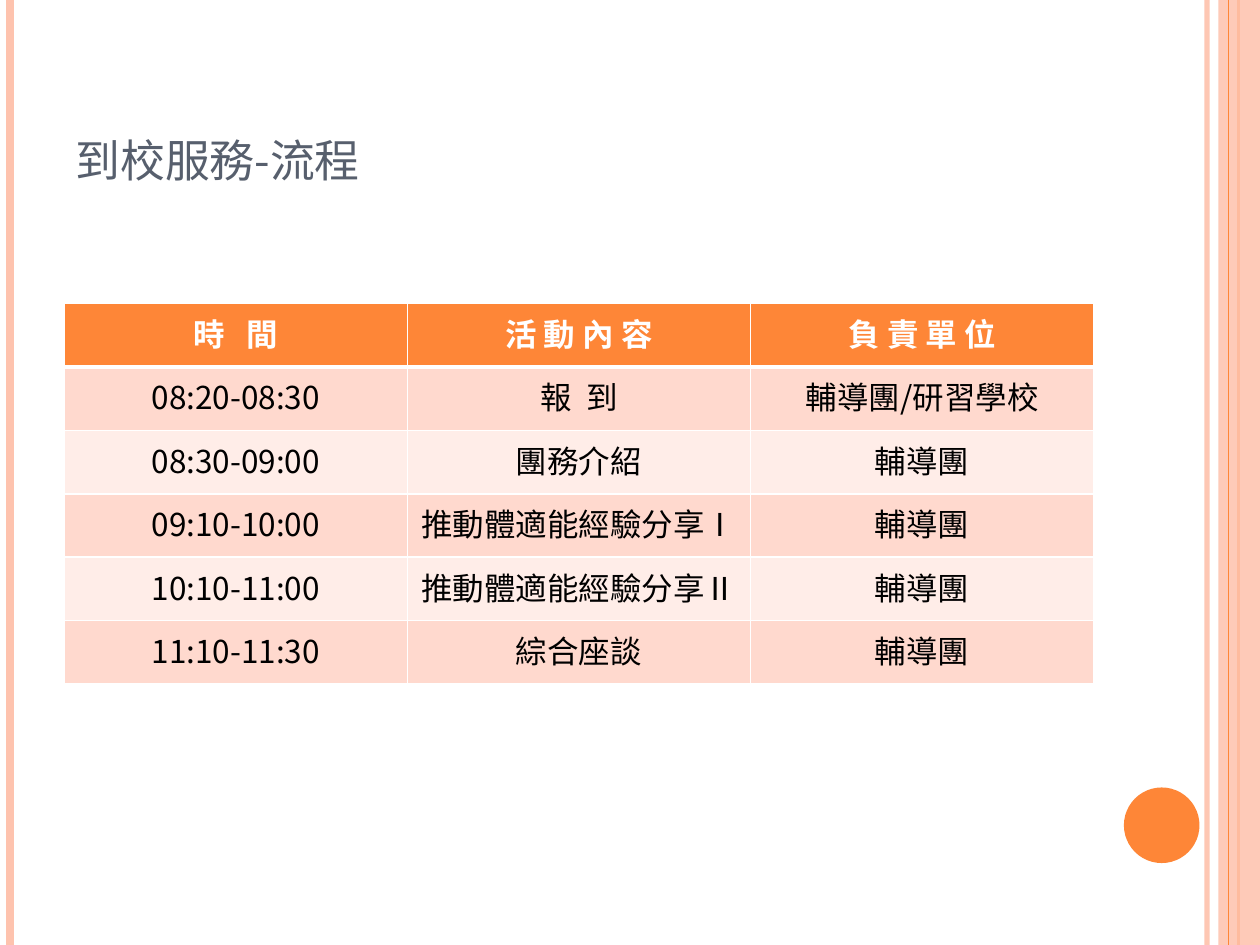
from lxml.etree import SubElement
from pptx import Presentation
from pptx.dml.color import RGBColor
from pptx.enum.shapes import MSO_CONNECTOR as Connector, MSO_SHAPE as Shape
from pptx.enum.text import MSO_ANCHOR as Anchor, PP_ALIGN as Align
from pptx.oxml.ns import qn
from pptx.util import Inches, Pt

FONT = "Noto Sans CJK SC"
ORANGE = "FE8637"
PEACH = "FEC3AE"
WHITE = "FFFFFF"
BLACK = "000000"
SLATE = "575F6D"
BANDS = ("FFD9CE", "FFEDE8")

SCHEDULE = [
    ("時   間", "活 動 內 容", "負 責 單 位"),
    ("08:20-08:30", "報  到", "輔導團/研習學校"),
    ("08:30-09:00", "團務介紹", "輔導團"),
    ("09:10-10:00", "推動體適能經驗分享Ⅰ", "輔導團"),
    ("10:10-11:00", "推動體適能經驗分享Ⅱ", "輔導團"),
    ("11:10-11:30", "綜合座談", "輔導團"),
]
RULES = [
    (9.58, PEACH, 3, 93),
    (0.08, PEACH, 4.5, 100),
    (9.83, ORANGE, 1.5, 100),
    (9.75, ORANGE, 0.75, 100),
]


def color(value):
    return RGBColor.from_string(value)


def set_opacity(fill_parent, percent):
    if percent < 100:
        tint = fill_parent.find(qn("a:solidFill"))[0]
        SubElement(tint, qn("a:alpha"), val=str(percent * 1000))


class SlideBuilder:
    def __init__(self, slide, font):
        self.slide = slide
        self.font = font

    def format_text(self, para, size, tone, bold=False):
        for span in para.runs:
            span.font.size = Pt(size)
            span.font.bold = bold
            span.font.color.rgb = color(tone)
            span.font.name = self.font
            SubElement(span.font._element, qn("a:ea"), typeface=self.font)

    def rule(self, x, tone, width, opacity):
        line = self.slide.shapes.add_connector(
            Connector.STRAIGHT, Inches(x), 0, Inches(x), Inches(7.5))
        line.line.color.rgb = color(tone)
        line.line.width = Pt(width)
        properties = line._element.spPr
        set_opacity(properties.find(qn("a:ln")), opacity)
        SubElement(properties, qn("a:effectLst"))

    def shape(self, kind, left, top, width, height, tone, opacity=100):
        item = self.slide.shapes.add_shape(
            kind, Inches(left), Inches(top), Inches(width), Inches(height))
        item.shadow.inherit = False
        item.fill.solid()
        item.fill.fore_color.rgb = color(tone)
        item.line.fill.background()
        set_opacity(item._element.spPr, opacity)

    def title(self, text, left, top, width, height):
        box = self.slide.shapes.title
        box.left, box.top = Inches(left), Inches(top)
        box.width, box.height = Inches(width), Inches(height)
        frame = box.text_frame
        frame.text = text
        frame.word_wrap = True
        frame.vertical_anchor = Anchor.BOTTOM
        para = frame.paragraphs[0]
        para.alignment = Align.LEFT
        self.format_text(para, 32, SLATE)
        for span in para.runs:
            span.font._element.set("cap", "small")

    def borders(self, cell, bottom, top):
        properties = cell._tc.get_or_add_tcPr()
        for side, width in (("L", 1), ("R", 1), ("T", top), ("B", bottom)):
            line = SubElement(properties, qn(f"a:ln{side}"), w=str(Pt(width)))
            fill = SubElement(line, qn("a:solidFill"))
            SubElement(fill, qn("a:srgbClr"), val=WHITE)

    def table(self, rows, left, top, width, height):
        grid = self.slide.shapes.add_table(
            len(rows), len(rows[0]), Inches(left), Inches(top),
            Inches(width), Inches(height)).table
        for row, texts in enumerate(rows):
            header = row == 0
            for column, text in enumerate(texts):
                cell = grid.cell(row, column)
                self.borders(cell, 3 if header else 1, 3 if row == 1 else 1)
                cell.fill.solid()
                cell.fill.fore_color.rgb = color(
                    ORANGE if header else BANDS[(row - 1) % 2])
                cell.text_frame.text = text
                para = cell.text_frame.paragraphs[0]
                para.alignment = Align.CENTER
                self.format_text(para, 18, WHITE if header else BLACK, header)


def main():
    deck = Presentation()
    deck.slide_width, deck.slide_height = Inches(10), Inches(7.5)
    page = SlideBuilder(deck.slides.add_slide(deck.slide_layouts[5]), FONT)
    for rule in RULES[:3]:
        page.rule(*rule)
    page.shape(Shape.RECTANGLE, 9.67, 0, 0.33, 7.5, PEACH, 87)
    page.rule(*RULES[3])
    page.shape(Shape.OVAL, 8.92, 6.25, 0.6, 0.6, ORANGE)
    page.title("到校服務-流程", 0.5, 0.3, 8.17, 1.25)
    page.table(SCHEDULE, 0.51, 2.41, 8.17, 3.02)
    deck.save("out.pptx")


if __name__ == "__main__":
    main()
